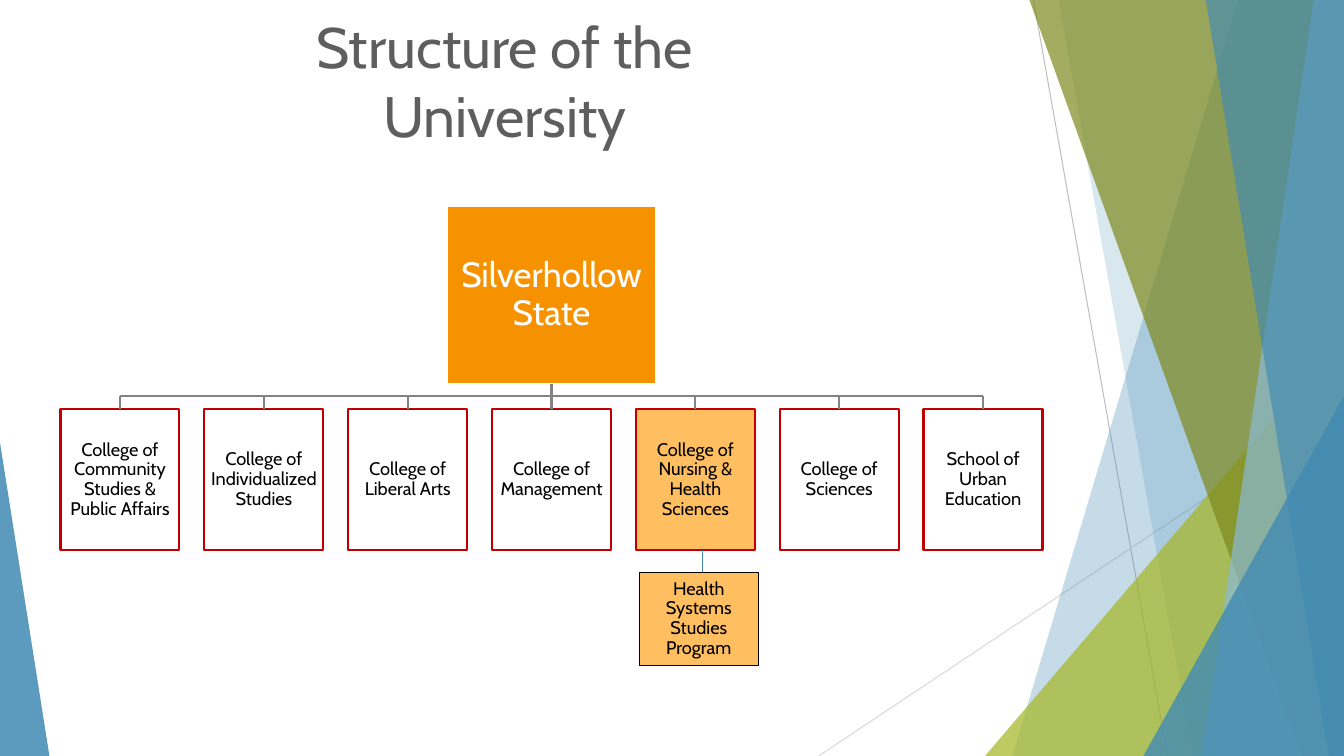
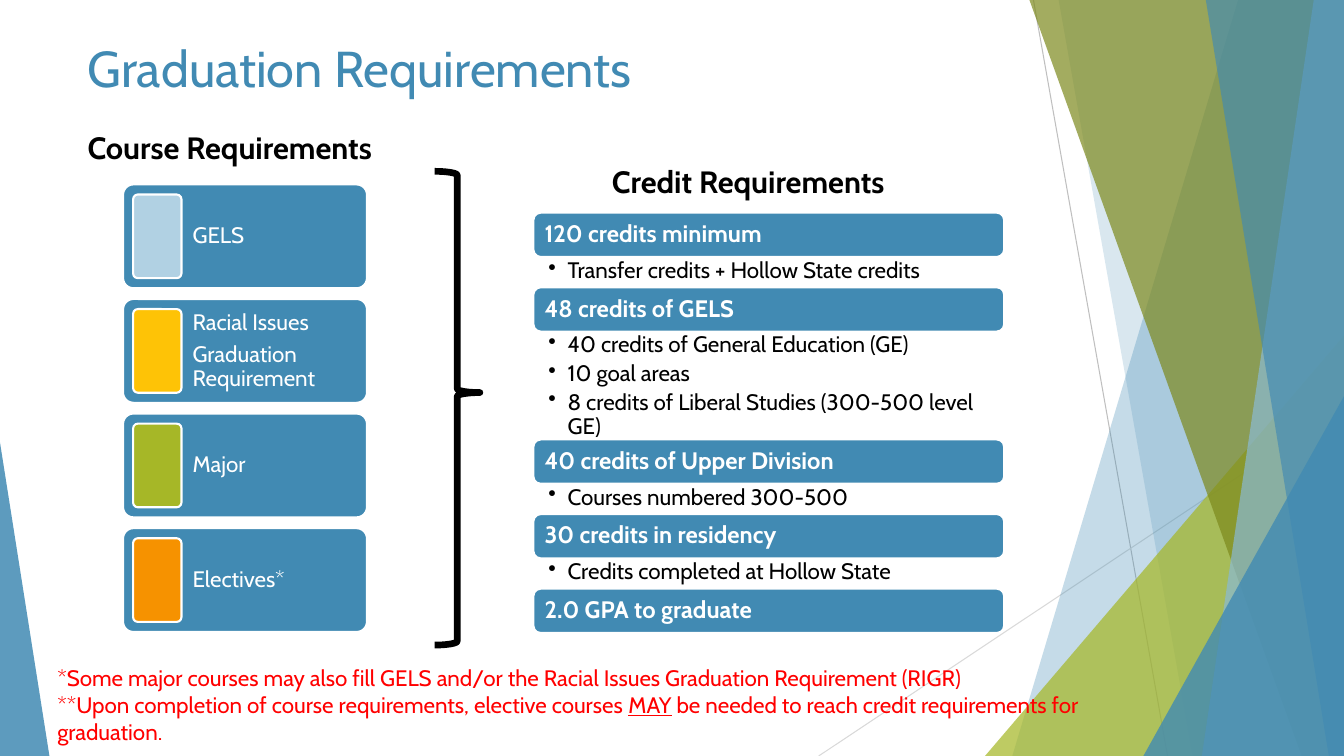
"""Build two university slides: an organisation chart and graduation requirements."""
from dataclasses import dataclass

from lxml import etree
from pptx import Presentation
from pptx.dml.color import RGBColor
from pptx.enum.shapes import MSO_CONNECTOR, MSO_SHAPE
from pptx.enum.text import MSO_ANCHOR, PP_ALIGN
from pptx.oxml.ns import qn
from pptx.shapes.autoshape import Shape
from pptx.shapes.connector import Connector
from pptx.shapes.shapetree import GroupShapes, SlideShapes
from pptx.slide import Slide, SlideLayout
from pptx.text.text import TextFrame
from pptx.util import Inches, Pt

RECT, ROUND = MSO_SHAPE.RECTANGLE, MSO_SHAPE.ROUNDED_RECTANGLE
TRIANGLE, BRACE = MSO_SHAPE.ISOSCELES_TRIANGLE, MSO_SHAPE.RIGHT_BRACE
STRAIGHT = MSO_CONNECTOR.STRAIGHT
TOP, MIDDLE = MSO_ANCHOR.TOP, MSO_ANCHOR.MIDDLE
LEFT, CENTER = PP_ALIGN.LEFT, PP_ALIGN.CENTER
SIDE_TOP, SIDE_BOTTOM = 0, 2

FONT = "Cabin"
WIDTH, HEIGHT = 13.33, 7.5
BLUE = RGBColor(0x41, 0x8A, 0xB3)
SKY = RGBColor(0x8A, 0xBA, 0xD4)
PALE_BLUE = RGBColor(0xB1, 0xD1, 0xE3)
GREEN = RGBColor(0xA6, 0xB7, 0x27)
OLIVE = RGBColor(0x7D, 0x89, 0x1D)
ORANGE = RGBColor(0xF6, 0x92, 0x00)
PEACH = RGBColor(0xFF, 0xBF, 0x61)
YELLOW = RGBColor(0xFE, 0xC3, 0x06)
RED = RGBColor(0xFF, 0x00, 0x00)
DARK_RED = RGBColor(0xC0, 0x00, 0x00)
BLACK = RGBColor(0x00, 0x00, 0x00)
WHITE = RGBColor(0xFF, 0xFF, 0xFF)
DARK_GRAY = RGBColor(0x5E, 0x5E, 0x5E)
GRAY = RGBColor(0x83, 0x83, 0x83)
SILVER = RGBColor(0xBF, 0xBF, 0xBF)
LIGHT_GRAY = RGBColor(0xD9, 0xD9, 0xD9)

Shapes = SlideShapes | GroupShapes
Insets = tuple[float, float, float, float]


@dataclass(frozen=True)
class Band:
    """A translucent band on the right edge, given by its left corners."""
    top_x: float
    bottom_x: float
    color: RGBColor
    opacity: int


@dataclass(frozen=True)
class Wedge:
    """A translucent triangle standing on the bottom edge."""
    x: float
    y: float
    w: float
    apex: float
    color: RGBColor
    opacity: int


@dataclass(frozen=True)
class Course:
    """A course requirement and the colour of its chip."""
    lines: tuple[str, ...]
    color: RGBColor


@dataclass(frozen=True)
class Credit:
    """A credit requirement, its bullets and their height."""
    head: str
    bullets: tuple[str, ...] = ()
    h: float = 0.3


DECOR: tuple[Band | Wedge, ...] = (
    Band(12.28, 10.04, BLUE, 30),
    Band(10.5, 11.83, BLUE, 20),
    Wedge(9.77, 3.33, 3.56, 1, GREEN, 72),
    Band(10.21, 12.91, OLIVE, 70),
    Band(13.03, 11.92, SKY, 70),
    Band(11.96, 13.18, BLUE, 65),
    Wedge(11.34, 3.93, 1.99, 1, BLUE, 80),
    Wedge(0, 4.39, 0.49, 0, BLUE, 85),
)
COLLEGES = (
    "College of Community Studies & Public Affairs",
    "College of Individualized Studies",
    "College of Liberal Arts",
    "College of Management",
    "College of Nursing & Health Sciences",
    "College of Sciences",
    "School of Urban Education",
)
NURSING = 4
COURSES = (
    Course(("GELS",), PALE_BLUE),
    Course(("Racial Issues", "Graduation Requirement"), YELLOW),
    Course(("Major",), GREEN),
    Course(("Electives*",), ORANGE),
)
CREDITS = (
    Credit("120 credits minimum", ("Transfer credits + Hollow State credits",)),
    Credit("48 credits of GELS", (
        "40 credits of General Education (GE)",
        "10 goal areas",
        "8 credits of Liberal Studies (300-500 level GE)",
    ), 1.07),
    Credit("40 credits of Upper Division", ("Courses numbered 300-500",)),
    Credit("30 credits in residency", ("Credits completed at Hollow State",)),
    Credit("2.0 GPA to graduate"),
)
NOTES = (
    "*Some major courses may also fill GELS and/or the Racial Issues Graduation Requirement (RIGR)",
    "**Upon completion of course requirements, elective courses MAY be needed to reach credit "
    "requirements for graduation.",
)


def write(tf: TextFrame, *lines: str, size: float, color: RGBColor = BLACK, bold: bool = False,
          align: PP_ALIGN = LEFT, anchor: MSO_ANCHOR = TOP, spacing: float = 1.0, after: float = 0,
          insets: Insets = (0.1, 0.05, 0.1, 0.05), bullet: bool = False, underline: str = "") -> None:
    """Fill a text frame with one paragraph per line."""
    tf.word_wrap = True
    tf.vertical_anchor = anchor
    tf.margin_left, tf.margin_top, tf.margin_right, tf.margin_bottom = map(Inches, insets)
    for i, line in enumerate(lines):
        p = tf.add_paragraph() if i else tf.paragraphs[0]
        p.alignment, p.line_spacing, p.space_after = align, spacing, Pt(after)
        if bullet:
            pPr = p._p.get_or_add_pPr()
            pPr.set("marL", str(Inches(0.19)))
            pPr.set("indent", str(-Inches(0.19)))
            etree.SubElement(pPr, qn("a:buChar")).set("char", "•")
        parts = line.partition(underline) if underline else (line,)
        for part in filter(None, parts):
            r = p.add_run()
            r.text = part
            r.font.name, r.font.size, r.font.bold = FONT, Pt(size), bold
            r.font.color.rgb = color
            if part == underline:
                r.font.underline = True


def add_text(s: Slide, x: float, y: float, w: float, h: float) -> TextFrame:
    """Add a text box and return its frame."""
    return s.shapes.add_textbox(Inches(x), Inches(y), Inches(w), Inches(h)).text_frame


def style(sp: Shape, fill: RGBColor | None, line: RGBColor | None, width: float, opacity: int) -> None:
    """Set the fill and outline of a shape and drop its shadow."""
    sp.shadow.inherit = False
    if fill is None:
        sp.fill.background()
    else:
        sp.fill.solid()
        sp.fill.fore_color.rgb = fill
        if opacity < 100:
            clr = sp.element.find(".//" + qn("a:srgbClr"))
            etree.SubElement(clr, qn("a:alpha")).set("val", str(opacity * 1000))
    if line is None:
        sp.line.fill.background()
    else:
        sp.line.color.rgb = line
        sp.line.width = Pt(width)


def add_box(shapes: Shapes, kind: MSO_SHAPE, x: float, y: float, w: float, h: float,
            fill: RGBColor | None = None, line: RGBColor | None = None, width: float = 1.5,
            adj: tuple[float, ...] = (), opacity: int = 100) -> Shape:
    """Add a preset shape."""
    sp = shapes.add_shape(kind, Inches(x), Inches(y), Inches(w), Inches(h))
    for i, value in enumerate(adj):
        sp.adjustments[i] = value
    style(sp, fill, line, width, opacity)
    return sp


def add_line(shapes: Shapes, x1: float, y1: float, x2: float, y2: float,
             color: RGBColor, width: float) -> Connector:
    """Add a straight connector without a shadow."""
    c = shapes.add_connector(STRAIGHT, Inches(x1), Inches(y1), Inches(x2), Inches(y2))
    c.line.color.rgb = color
    c.line.width = Pt(width)
    etree.SubElement(c.element.spPr, qn("a:effectLst"))
    return c


def add_decor(s: Slide, layout: SlideLayout) -> None:
    """Draw the shared decoration and move it to the layout."""
    group = s.shapes.add_group_shape()
    shapes = group.shapes
    add_line(shapes, 10.25, 0, 11.58, HEIGHT, SILVER, 0.75)
    add_line(shapes, WIDTH, 4.03, 8.12, HEIGHT, LIGHT_GRAY, 0.75)
    for d in DECOR:
        if isinstance(d, Wedge):
            add_box(shapes, TRIANGLE, d.x, d.y, d.w, HEIGHT - d.y, d.color,
                    adj=(d.apex,), opacity=d.opacity)
        else:
            corners = ((WIDTH, 0), (WIDTH, HEIGHT), (d.bottom_x, HEIGHT))
            builder = shapes.build_freeform(Inches(d.top_x), 0)
            builder.add_line_segments([(Inches(x), Inches(y)) for x, y in corners], close=True)
            style(builder.convert_to_shape(), d.color, None, 0, d.opacity)
    layout.shapes.element.append(group.element)


def add_structure(s: Slide) -> None:
    """Draw the organisation chart."""
    write(add_text(s, 1.67, 0.17, 6.67, 1.25), "Structure of the", "University",
          size=40.7, color=DARK_GRAY, align=CENTER, anchor=MIDDLE)
    first, last, y, w, h = 0.6, 9.16, 4.06, 1.18, 1.4
    pitch = (last - first) / (len(COLLEGES) - 1)
    mid, bus_y = 5.47, 3.93
    unit = dict(size=13, align=CENTER, anchor=MIDDLE, spacing=0.9, insets=(0.01,) * 4)

    root = add_box(s.shapes, RECT, 4.43, 2.04, 2.08, 1.77, ORANGE, WHITE)
    write(root.text_frame, "Silverhollow State", **{**unit, "size": 25}, color=WHITE)
    trunk = add_line(s.shapes, mid, 3.81, mid, bus_y, GRAY, 1.5)
    trunk.begin_connect(root, SIDE_BOTTOM)
    add_line(s.shapes, first + w / 2, bus_y, last + w / 2, bus_y, GRAY, 1.5)
    for i, name in enumerate(COLLEGES):
        x = first + i * pitch
        sp = add_box(s.shapes, RECT, x, y, w, h, PEACH if i == NURSING else None, DARK_RED)
        write(sp.text_frame, name, **unit)
        drop = add_line(s.shapes, x + w / 2, bus_y, x + w / 2, y, GRAY, 1.5)
        drop.end_connect(sp, SIDE_TOP)
    add_line(s.shapes, 6.97, y + h, 6.97, 5.68, BLUE, 1)
    program = add_box(s.shapes, RECT, 6.34, 5.68, w, 0.92, PEACH, BLACK, 0.25)
    write(program.text_frame, "Health Systems Studies Program", **unit)


def add_requirements(s: Slide) -> None:
    """Draw the course cards, the brace and the credit list."""
    write(add_text(s, 0.77, 0.32, 9.4, 1.44), "Graduation Requirements", size=36, color=BLUE)
    write(add_text(s, 0.77, 1.23, 3.31, 0.47), "Course Requirements", size=22, bold=True)
    write(add_text(s, 5.97, 1.57, 3.31, 0.47), "Credit Requirements", size=22, bold=True)

    top, last = 1.83, 5.24
    for i, course in enumerate(COURSES):
        y = top + i * (last - top) / (len(COURSES) - 1)
        card = add_box(s.shapes, ROUND, 1.22, y, 2.42, 1.03, BLUE, WHITE, adj=(0.1,))
        write(card.text_frame, *course.lines, size=16, color=WHITE, anchor=MIDDLE,
              spacing=0.9, after=5.6, insets=(0.66, 0.07, 0.07, 0.07))
        add_box(s.shapes, ROUND, 1.32, y + 0.1, 0.48, 0.83, course.color, WHITE, adj=(0.1,))

    x, y, w, bar_h = 5.29, 2.11, 4.67, 0.44
    for credit in CREDITS:
        bar = add_box(s.shapes, ROUND, x, y, w, bar_h, BLUE, WHITE)
        write(bar.text_frame, credit.head, size=17, color=WHITE, bold=True, anchor=MIDDLE,
              spacing=0.9, insets=(0.09, 0.07, 0.09, 0.07))
        y += bar_h
        if credit.bullets:
            write(add_text(s, x, y, w, credit.h), *credit.bullets, size=16, spacing=0.9,
                  after=3.2, insets=(0.15, 0.02, 0.12, 0.02), bullet=True)
            y += credit.h

    write(add_text(s, 0.47, 6.54, 10.76, 0.91), *NOTES, size=16, color=RED, underline="MAY")
    add_box(s.shapes, BRACE, 4.31, 1.7, 0.45, 4.7, line=BLACK, width=4.75, adj=(0.083, 0.467))


def main() -> None:
    """Build and save the presentation."""
    prs = Presentation()
    prs.slide_width, prs.slide_height = Inches(WIDTH), Inches(HEIGHT)
    blank = prs.slide_layouts[6]
    structure = prs.slides.add_slide(blank)
    add_decor(structure, blank)
    add_structure(structure)
    add_requirements(prs.slides.add_slide(blank))
    prs.save("out.pptx")


if __name__ == "__main__":
    main()
